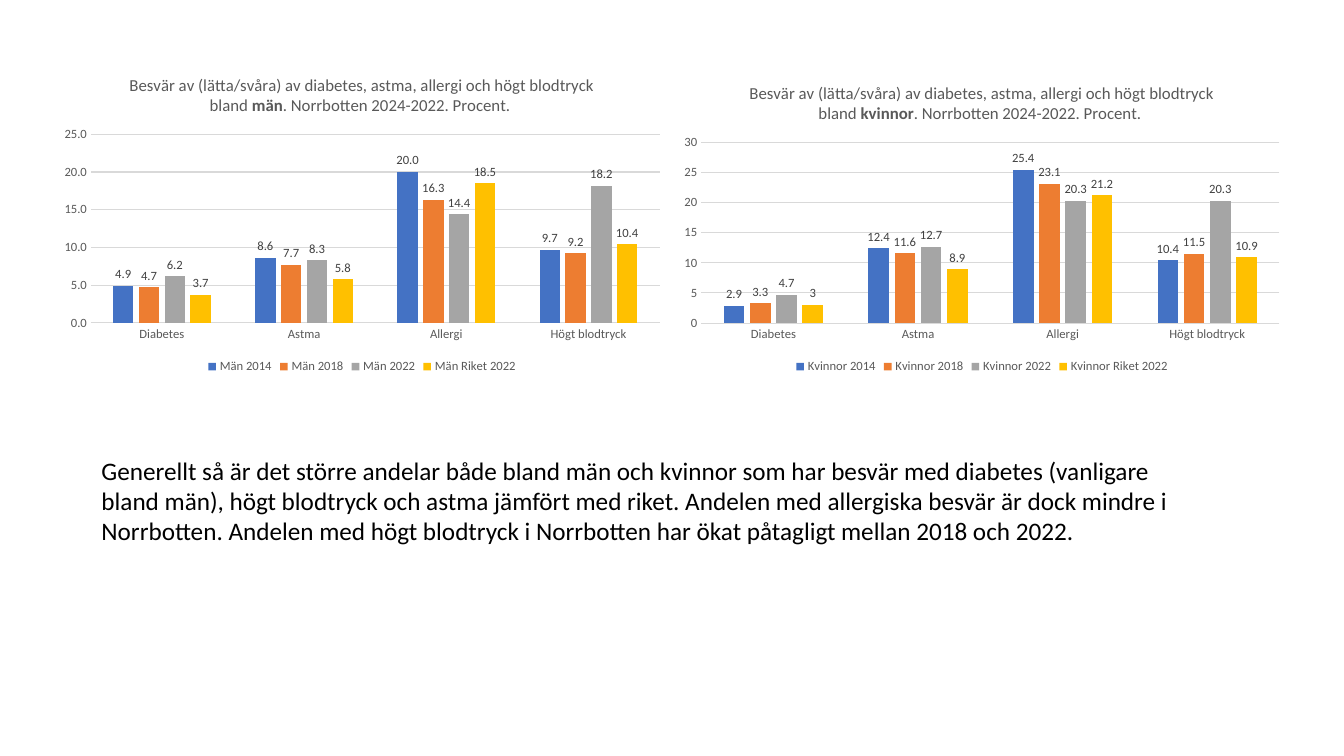
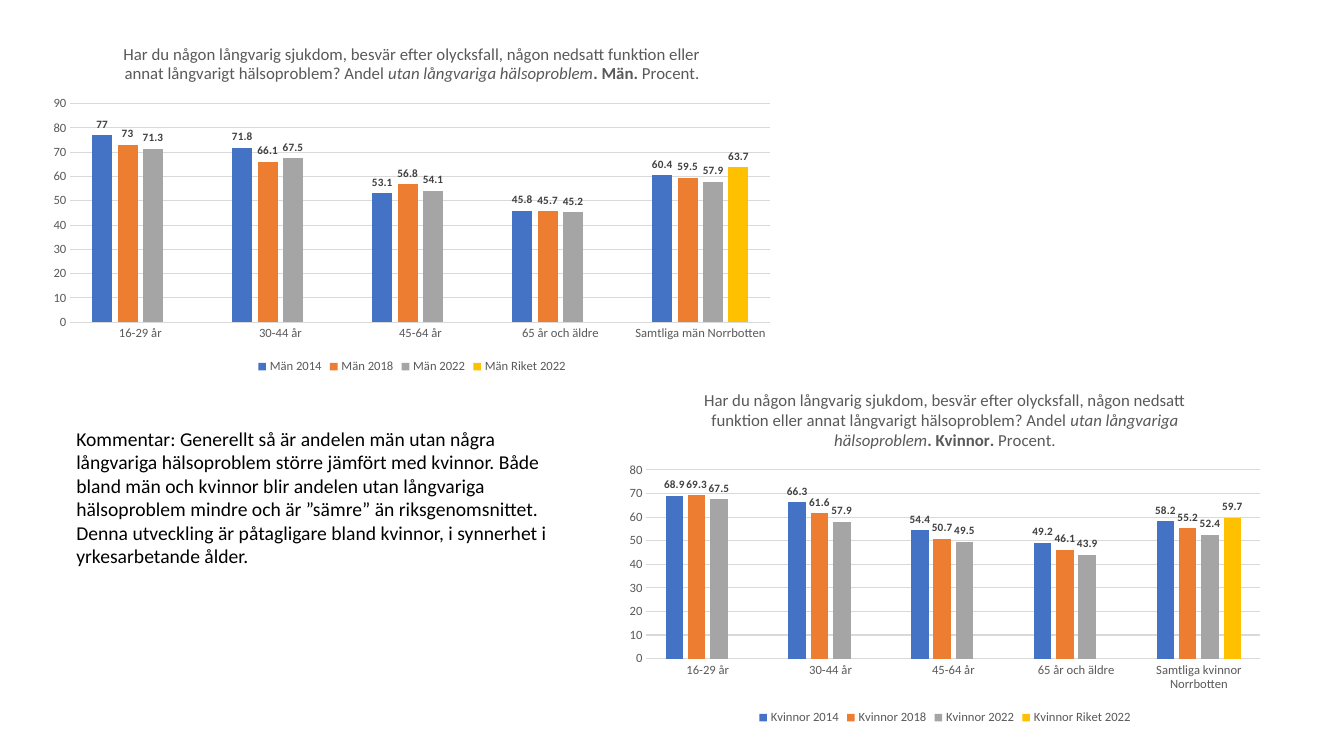
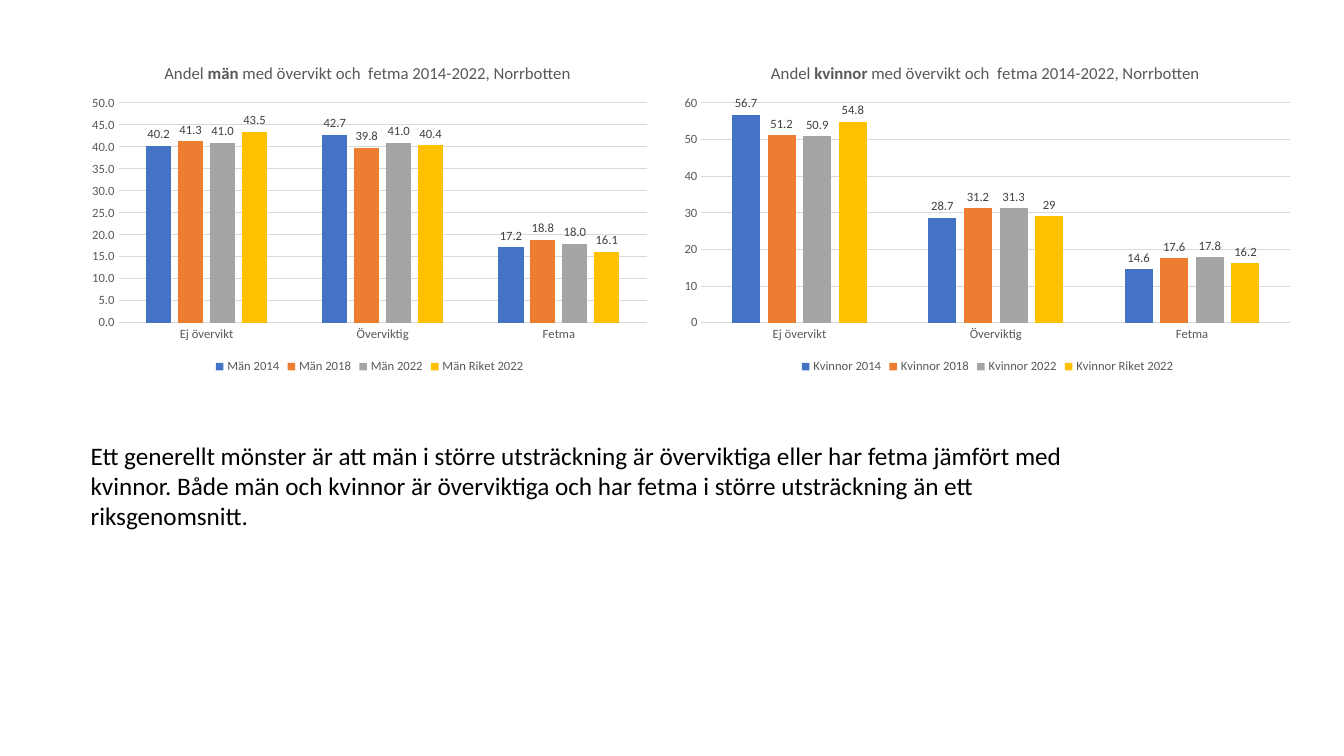
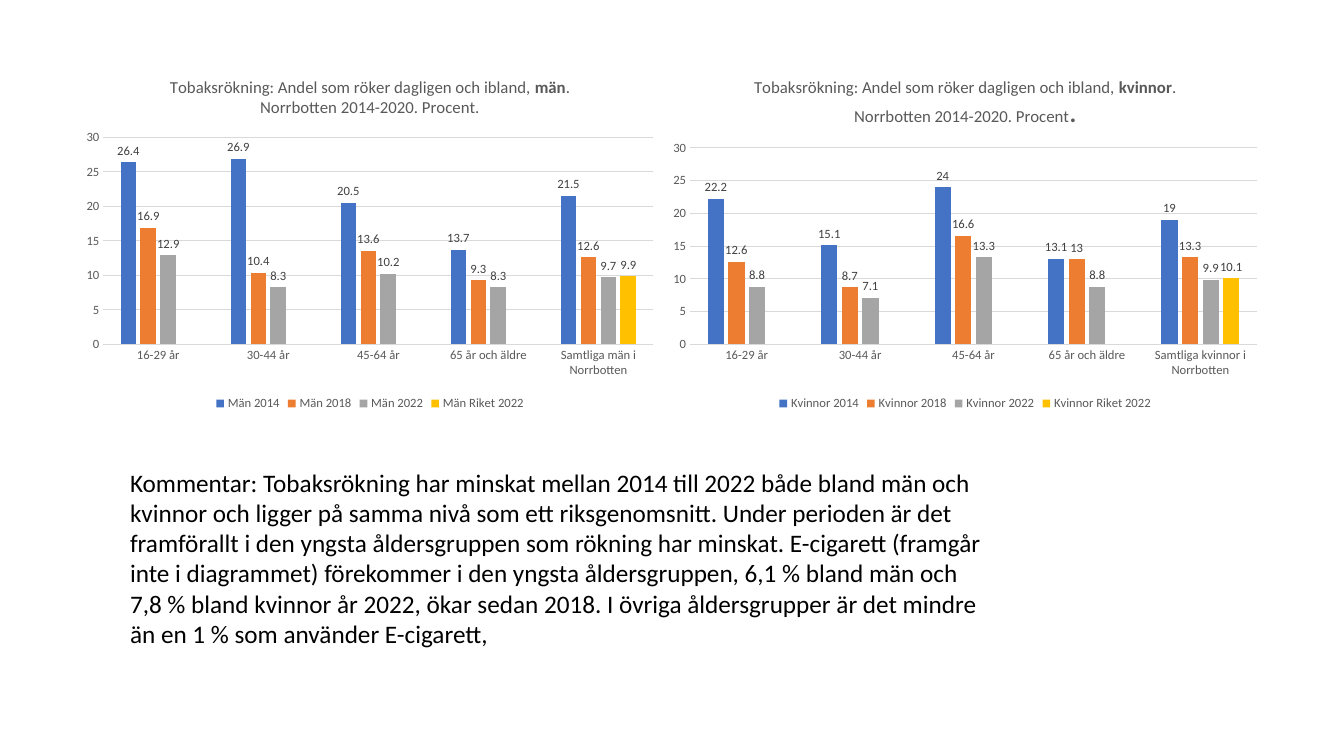
from pptx import Presentation
from pptx import util as u
from pptx.chart.data import CategoryChartData
from pptx.dml.color import RGBColor
from pptx.enum import chart as ch

COLS, ROWS = 160, 90
FONT = "Calibri"
HUES = {"text": "000000", "grey": "595959", "label": "404040", "rule": "D9D9D9",
        "2014": "4472C4", "2018": "ED7D31", "2022": "A5A5A5", "Riket 2022": "FFC000"}
WAVES = ["2014", "2018", "2022", "Riket 2022"]
AGES = ["16-29 år", "30-44 år", "45-64 år", "65 år och äldre"]
ILLS = ["Diabetes", "Astma", "Allergi", "Högt blodtryck"]
SIZES = ["Ej övervikt", "Överviktig", "Fetma"]
BOLD = {"bold": True}


def hue(name):
    return RGBColor.from_string(HUES[name])


def style(font, size=9, color="grey", bold=False, italic=False):
    font.name, font.size = FONT, u.Pt(size)
    font.bold, font.italic = bold, italic
    font.color.rgb = hue(color)


def write(frame, *parts, **base):
    para = frame.paragraphs[0]
    for part in parts:
        words, own = (part, {}) if isinstance(part, str) else part
        run = para.add_run()
        run.text = words
        style(run.font, **{**base, **own})


def total(*vals):
    """Values of the national series, known only for the last group."""
    return [None] * len(AGES) + list(vals)


class Deck:
    """Holds the style, the grid and the current slide."""

    def __init__(self):
        self.prs = Presentation()
        self.prs.slide_width, self.prs.slide_height = u.Inches(13.33), u.Inches(7.5)
        self.slide = None

    def page(self):
        self.slide = self.prs.slides.add_slide(self.prs.slide_layouts[6])

    def box(self, x, y, w, h):
        dx, dy = self.prs.slide_width / COLS, self.prs.slide_height / ROWS
        return [round(v) for v in (x * dx, y * dy, w * dx, h * dy)]

    def note(self, words, at, size=18):
        frame = self.slide.shapes.add_textbox(*self.box(*at)).text_frame
        frame.word_wrap = True
        write(frame, words, size=size, color="text")

    def bars(self, at, who, title, cats, rows, fmt="General", **label):
        data = CategoryChartData(number_format=fmt)
        data.categories = cats
        for wave, vals in zip(WAVES, rows):
            data.add_series(f"{who} {wave}", vals)
        chart = self.slide.shapes.add_chart(
            ch.XL_CHART_TYPE.COLUMN_CLUSTERED, *self.box(*at), data).chart
        style(chart.font, 10, "text")
        write(chart.chart_title.text_frame, *title, size=12)
        chart.has_legend = True
        chart.legend.position = ch.XL_LEGEND_POSITION.BOTTOM
        chart.legend.include_in_layout = False
        style(chart.legend.font)
        self.axes(chart, fmt)
        plot = chart.plots[0]
        plot.gap_width, plot.overlap, plot.vary_by_categories = 219, -27, False
        for wave, ser in zip(WAVES, plot.series):
            ser.format.fill.solid()
            ser.format.fill.fore_color.rgb = hue(wave)
            ser.invert_if_negative = False
            tags = ser.data_labels
            tags.show_value = True
            tags.position = ch.XL_LABEL_POSITION.OUTSIDE_END
            tags.number_format, tags.number_format_is_linked = fmt, False
            style(tags.font, color="label", **label)

    def axes(self, chart, fmt):
        cat, val = chart.category_axis, chart.value_axis
        for axis in (cat, val):
            axis.major_tick_mark = axis.minor_tick_mark = ch.XL_TICK_MARK.NONE
            style(axis.tick_labels.font)
        val.format.line.fill.background()
        val.tick_labels.number_format = fmt
        val.tick_labels.number_format_is_linked = False
        for line in (cat.format.line, val.major_gridlines.format.line):
            line.color.rgb = hue("rule")
            line.width = u.Pt(0.75)


def ills(deck):
    def title(sex):
        return ("Besvär av (lätta/svåra) av diabetes, astma, allergi och högt blodtryck bland ",
                (sex, BOLD), ". Norrbotten 2024-2022. Procent. ")

    deck.page()
    deck.bars((6.2, 7, 73.8, 38), "Män", title("män"), ILLS,
              [[4.9, 8.6, 20, 9.7], [4.7, 7.7, 16.3, 9.2],
               [6.2, 8.3, 14.4, 18.2], [3.7, 5.8, 18.5, 10.4]], fmt="0.0")
    deck.bars((80, 8, 73.8, 37), "Kvinnor", title("kvinnor"), ILLS,
              [[2.9, 12.4, 25.4, 10.4], [3.3, 11.6, 23.1, 11.5],
               [4.7, 12.7, 20.3, 20.3], [3, 8.9, 21.2, 10.9]])
    deck.note("Generellt så är det större andelar både bland män och kvinnor som har besvär med "
              "diabetes (vanligare bland män), högt blodtryck och astma jämfört med riket. Andelen "
              "med allergiska besvär är dock mindre i Norrbotten. Andelen med högt blodtryck i "
              "Norrbotten har ökat påtagligt mellan 2018 och 2022.", (10.9, 53.6, 131.4, 12.1))


def health(deck):
    def title(who):
        return ("Har du någon långvarig sjukdom, besvär efter olycksfall, någon nedsatt funktion "
                "eller annat långvarigt hälsoproblem? Andel ",
                ("utan långvariga hälsoproblem", {"italic": True}),
                (f". {who}.", BOLD), " Procent.")

    deck.page()
    deck.bars((4.6, 3.2, 88.9, 41.8), "Män", title("Män"), AGES + ["Samtliga män Norrbotten"],
              [[77, 71.8, 53.1, 45.8, 60.4], [73, 66.1, 56.8, 45.7, 59.5],
               [71.3, 67.5, 54.1, 45.2, 57.9], total(63.7)], size=8, bold=True)
    deck.bars((73.4, 44.4, 78.2, 42.4), "Kvinnor", title("Kvinnor"),
              AGES + ["Samtliga kvinnor Norrbotten"],
              [[68.9, 66.3, 54.4, 49.2, 58.2], [69.3, 61.6, 50.7, 46.1, 55.2],
               [67.5, 57.9, 49.5, 43.9, 52.4], total(59.7)], size=8, bold=True)
    deck.note("Kommentar: Generellt så är andelen män utan några långvariga hälsoproblem större "
              "jämfört med kvinnor. Både bland män och kvinnor blir andelen utan långvariga "
              "hälsoproblem mindre och är ”sämre” än riksgenomsnittet. Denna utveckling är "
              "påtagligare bland kvinnor, i synnerhet i yrkesarbetande ålder.",
              (7.9, 50.2, 60.1, 18.1), size=14)


def weight(deck):
    def title(sex):
        return "Andel ", (sex, BOLD), " med övervikt och  fetma 2014-2022, Norrbotten "

    deck.page()
    deck.bars((9.6, 5.6, 68.8, 39.4), "Män", title("män"), SIZES,
              [[40.2, 42.7, 17.2], [41.3, 39.8, 18.8],
               [41, 41, 18], [43.5, 40.4, 16.1]], fmt="0.0")
    deck.bars((80, 5.6, 75.1, 39.4), "Kvinnor", title("kvinnor"), SIZES,
              [[56.7, 28.7, 14.6], [51.2, 31.2, 17.6],
               [50.9, 31.3, 17.8], [54.8, 29, 16.2]])
    deck.note("Ett generellt mönster är att män i större utsträckning är överviktiga eller har "
              "fetma jämfört med kvinnor. Både män och kvinnor är överviktiga och har fetma i "
              "större utsträckning än ett riksgenomsnitt.", (9.6, 51.8, 120.4, 12.1))


def smoke(deck):
    def title(sex, stop):
        return ("Tobaksrökning: Andel som röker dagligen och ibland, ", (sex, BOLD),
                ". Norrbotten 2014-2020. Procent", (".", stop))

    deck.page()
    deck.bars((8.9, 7.2, 70.3, 42.2), "Män", title("män", {}),
              AGES + ["Samtliga män i Norrbotten"],
              [[26.4, 26.9, 20.5, 13.7, 21.5], [16.9, 10.4, 13.6, 9.3, 12.6],
               [12.9, 8.3, 10.2, 8.3, 9.7], total(9.9)])
    deck.bars((78.7, 7.2, 72.4, 42.2), "Kvinnor", title("kvinnor", {"size": 18, "bold": True}),
              AGES + ["Samtliga kvinnor i Norrbotten"],
              [[22.2, 15.1, 24, 13.1, 19], [12.6, 8.7, 16.6, 13, 13.3],
               [8.8, 7.1, 13.3, 8.8, 9.9], total(10.1)])
    deck.note("Kommentar: Tobaksrökning har minskat mellan 2014 till 2022 både bland män och "
              "kvinnor och ligger på samma nivå som ett riksgenomsnitt. Under perioden är det "
              "framförallt i den yngsta åldersgruppen som rökning har minskat. E-cigarett (framgår "
              "inte i diagrammet) förekommer i den yngsta åldersgruppen, 6,1 % bland män och 7,8 % "
              "bland kvinnor år 2022, ökar sedan 2018. I övriga åldersgrupper är det mindre än en "
              "1 % som använder E-cigarett,", (14.3, 55, 105, 23))


def main():
    deck = Deck()
    for build in (ills, health, weight, smoke):
        build(deck)
    deck.prs.save("out.pptx")


if __name__ == "__main__":
    main()
